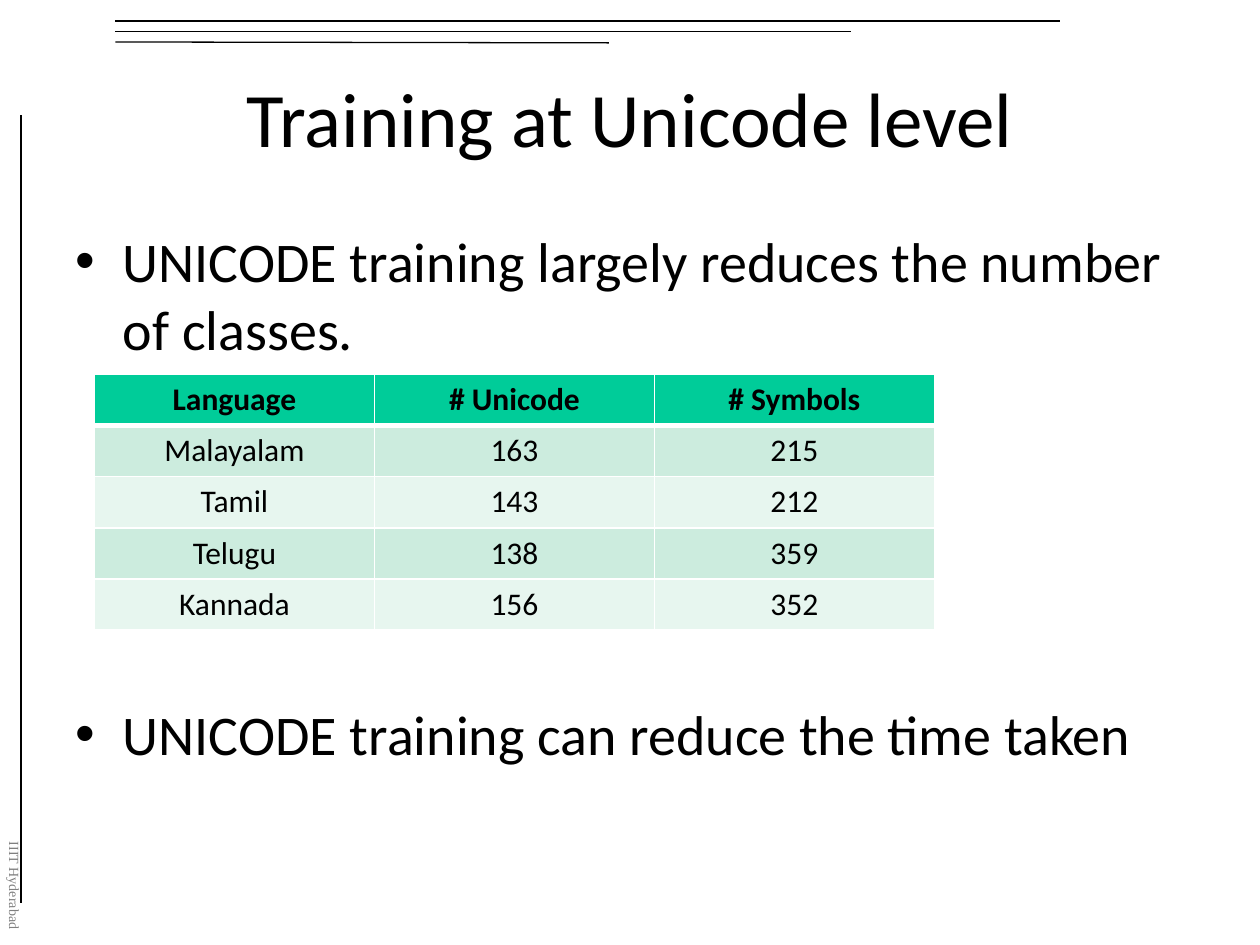
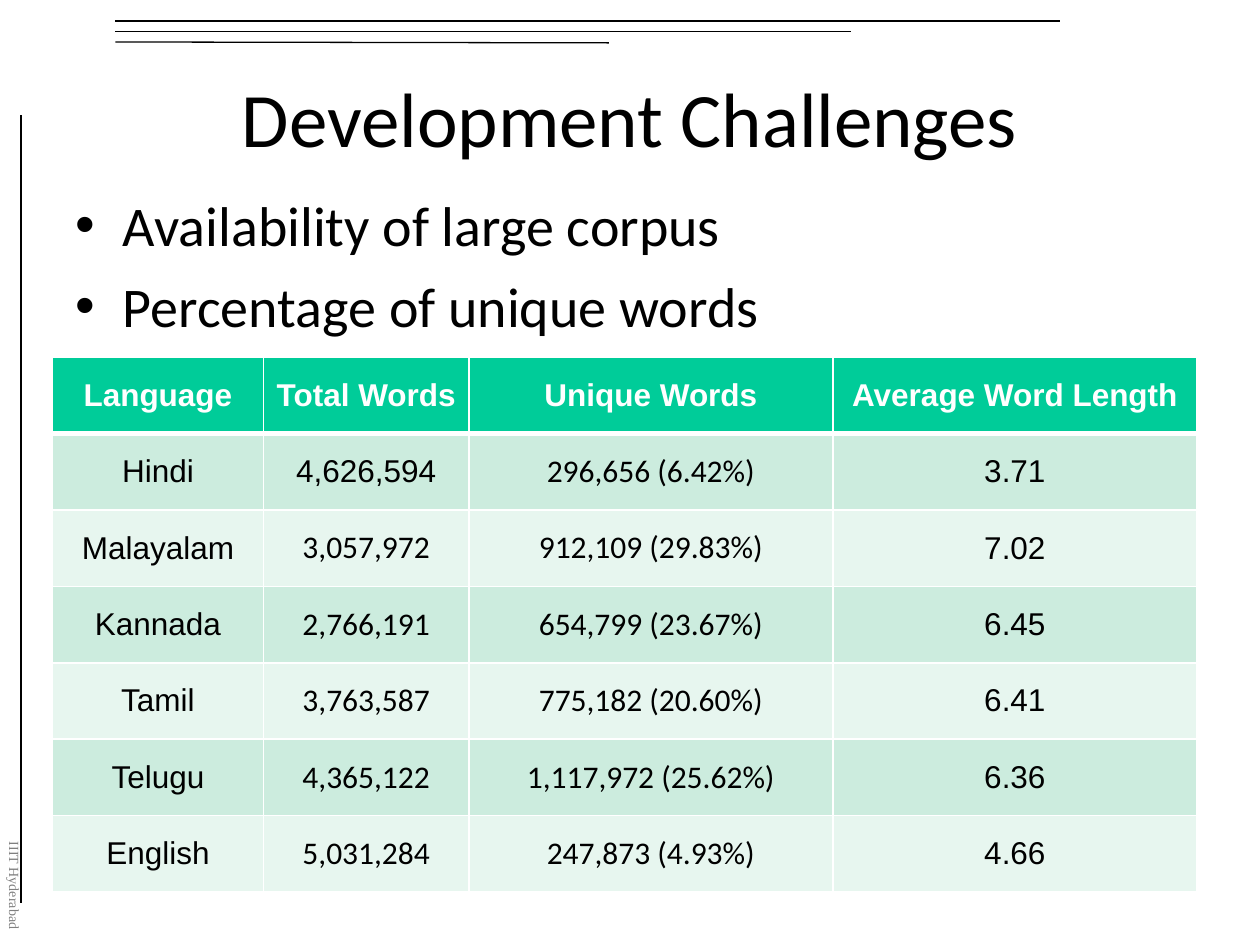
"""Build two slides on Unicode training and corpus challenges."""
import lxml.etree
import pptx
import pptx.dml.color
import pptx.enum.shapes
import pptx.enum.text
import pptx.oxml.ns
import pptx.util

Pt = pptx.util.Pt
qn = pptx.oxml.ns.qn
ALIGN = pptx.enum.text.PP_ALIGN
ANCHOR = pptx.enum.text.MSO_ANCHOR
FIT = pptx.enum.text.MSO_AUTO_SIZE

HUES = {"ink": "000000", "white": "FFFFFF", "grey": "808080",
        "head": "00CC99", "odd": "CCECDE", "even": "E7F6EF"}
RULES = [(66, 12, 606, 12), (66, 18, 486, 18), (66, 24, 348, 24.5),
         (12, 66, 12, 516)]

CLASSES = [
    ["Language", "# Unicode", "# Symbols"],
    ["Malayalam", "163", "215"],
    ["Tamil", "143", "212"],
    ["Telugu", "138", "359"],
    ["Kannada", "156", "352"],
]
CORPUS = [
    ["Language", "Total Words", "Unique Words", "Average Word Length"],
    ["Hindi", "4,626,594", "296,656 (6.42%)", "3.71"],
    ["Malayalam", "3,057,972", "912,109 (29.83%)", "7.02"],
    ["Kannada", "2,766,191", "654,799 (23.67%)", "6.45"],
    ["Tamil", "3,763,587", "775,182 (20.60%)", "6.41"],
    ["Telugu", "4,365,122", "1,117,972 (25.62%)", "6.36"],
    ["English", "5,031,284", "247,873 (4.93%)", "4.66"],
]


def tint(name):
    return pptx.dml.color.RGBColor.from_string(HUES[name])


def style(para, size, face="Calibri", hue="ink", bold=False):
    font = para.font
    font.size, font.name, font.bold = Pt(size), face, bold
    font.color.rgb = tint(hue)


def place(shape, left, top, width, height):
    shape.left, shape.top = Pt(left), Pt(top)
    shape.width, shape.height = Pt(width), Pt(height)


def add_rule(slide, ends):
    kind = pptx.enum.shapes.MSO_CONNECTOR.STRAIGHT
    rule = slide.shapes.add_connector(kind, *map(Pt, ends))
    rule.line.width = Pt(0.75)
    rule.line.color.rgb = tint("ink")
    props = rule.element.find(qn("p:spPr"))
    lxml.etree.SubElement(props, qn("a:effectLst"))


def add_mark(slide, text):
    box = slide.shapes.add_textbox(Pt(-7.2), Pt(474), Pt(24), Pt(66))
    frame = box.text_frame
    frame.word_wrap = True
    frame.auto_size = FIT.SHAPE_TO_FIT_TEXT
    frame.text = text
    style(frame.paragraphs[0], 8, "Times New Roman", "grey")
    box.element.find(".//" + qn("a:bodyPr")).set("vert", "eaVert")


def add_slide(deck, title):
    slide = deck.slides.add_slide(deck.slide_layouts[1])
    for ends in RULES:
        add_rule(slide, ends)
    add_mark(slide, "IIIT Hyderabad")
    head = slide.shapes.title
    place(head, 36, 10, 648, 113)
    frame = head.text_frame
    frame.text = title
    frame.auto_size = FIT.NONE
    frame.vertical_anchor = ANCHOR.MIDDLE
    frame.paragraphs[0].alignment = ALIGN.CENTER
    style(frame.paragraphs[0], 44)
    return slide


def fill_list(slide, top, items, gap=8):
    body = slide.placeholders[1]
    place(body, 36, top, 648, 417)
    frame = body.text_frame
    frame.text = "\n".join(items)
    frame.auto_size = FIT.NONE
    for i, para in enumerate(frame.paragraphs):
        para.space_before = Pt(gap if i else 0)
        style(para, 32)


def add_edge(cell, side, width):
    props = cell._tc.get_or_add_tcPr()
    edge = lxml.etree.SubElement(props, qn("a:ln" + side), w=str(Pt(width)))
    fill = lxml.etree.SubElement(edge, qn("a:solidFill"))
    lxml.etree.SubElement(fill, qn("a:srgbClr"), val=HUES["white"])


def fill_cell(cell, text, row, face, hue, anchor):
    for side in "LRTB":
        thick = (row, side) in ((0, "B"), (1, "T"))
        add_edge(cell, side, 3 if thick else 1)
    cell.fill.solid()
    band = "odd" if row % 2 else "even"
    cell.fill.fore_color.rgb = tint(band if row else "head")
    cell.vertical_anchor = anchor
    cell.text = text
    para = cell.text_frame.paragraphs[0]
    para.alignment = ALIGN.CENTER
    style(para, 18, face, "ink" if row else hue, row == 0)


def add_grid(slide, spot, widths, height, data, faces, hue, anchor):
    size = sum(widths), height * len(data)
    frame = slide.shapes.add_table(len(data), len(widths),
                                   *map(Pt, spot + size))
    table = frame.table
    for col, width in zip(table.columns, widths):
        col.width = Pt(width)
    for i, (texts, fonts) in enumerate(zip(data, faces)):
        table.rows[i].height = Pt(height)
        for j, (text, face) in enumerate(zip(texts, fonts)):
            fill_cell(table.cell(i, j), text, i, face, hue, anchor)


def main():
    deck = pptx.Presentation()
    deck.slide_width, deck.slide_height = Pt(720), Pt(540)

    slide = add_slide(deck, "Training at Unicode level")
    fill_list(slide, 126, [
        "UNICODE training largely reduces the number of classes.",
        "UNICODE training can reduce the time taken"], gap=193)
    add_grid(slide, (54, 214), (160, 160, 160), 29.2, CLASSES,
             [["Calibri"] * 3] * 5, "ink", ANCHOR.TOP)

    slide = add_slide(deck, "Development Challenges")
    fill_list(slide, 105, ["Availability of large corpus",
                           "Percentage of unique words"])
    faces = [["Arial"] * 4, ["Arial", "Arial", "Calibri", "Arial"]]
    faces += [["Arial", "Calibri", "Calibri", "Arial"]] * 5
    add_grid(slide, (30, 204), (120.6, 117.4, 208, 208), 43.7, CORPUS,
             faces, "white", ANCHOR.MIDDLE)
    deck.save("out.pptx")


if __name__ == "__main__":
    main()
